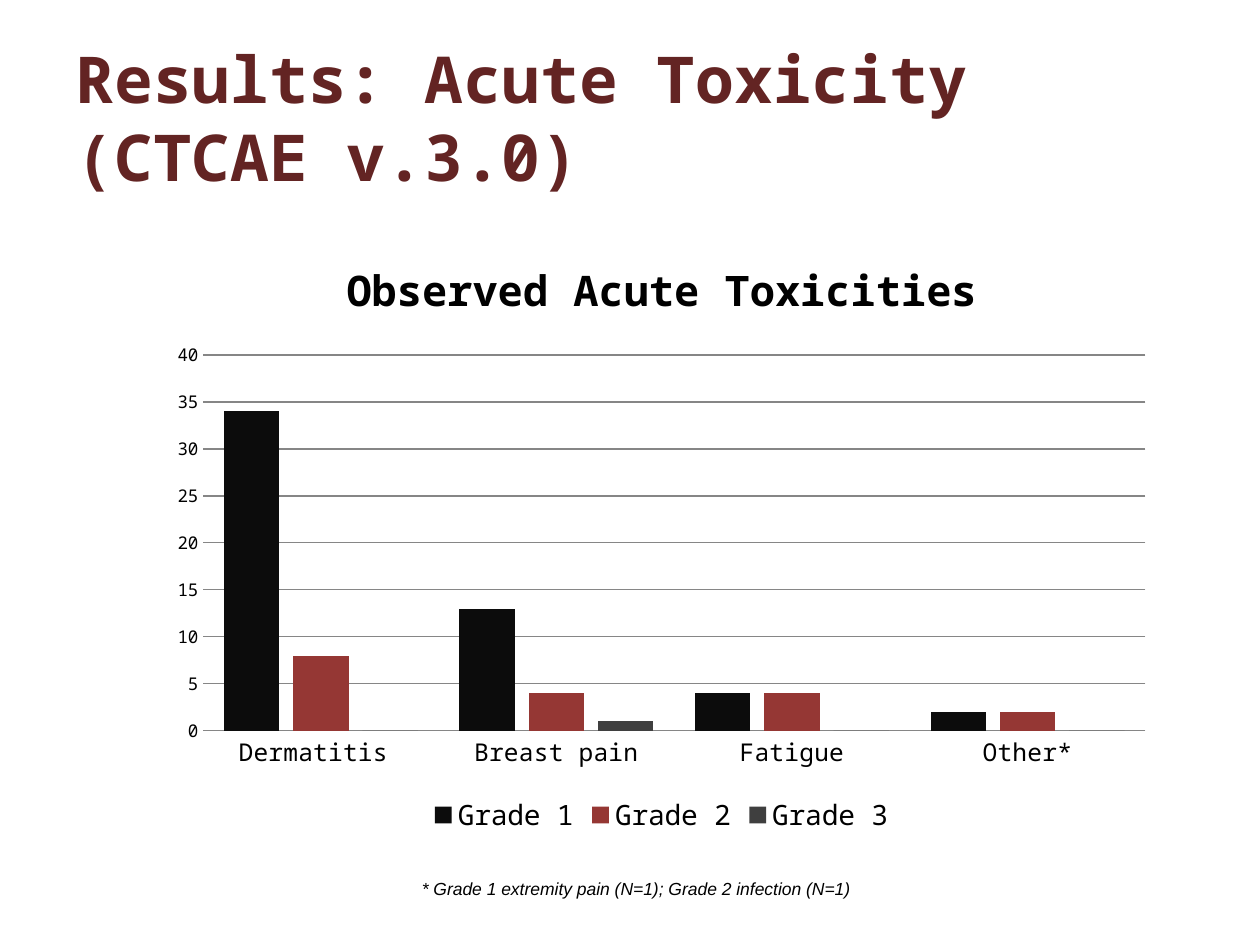
import pptx
import pptx.chart.data
import pptx.dml.color
import pptx.enum.chart
import pptx.enum.text
import pptx.util
from pptx.util import Inches

COLORS = {
    "title": "632423",
    "text": "000000",
    "grid": "868686",
    "Grade 1": "0C0C0C",
    "Grade 2": "953734",
    "Grade 3": "3F3F3F",
}
MONO = "Noto Sans Mono"
TOXICITIES = ["Dermatitis ", "Breast pain", "Fatigue", "Other*"]
GRADES = {
    "Grade 1": [34, 13, 4, 2],
    "Grade 2": [8, 4, 4, 2],
    "Grade 3": [0, 1, 0, 0],
}


def rgb(name):
    return pptx.dml.color.RGBColor.from_string(COLORS[name])


def style_font(font, size, color="text", **formats):
    font.size = pptx.util.Pt(size)
    font.color.rgb = rgb(color)
    for attribute, value in ({"name": MONO} | formats).items():
        setattr(font, attribute, value)


def write_text(frame, text, anchor, size, **formats):
    frame.word_wrap = True
    frame.vertical_anchor = anchor
    paragraph = frame.paragraphs[0]
    paragraph.alignment = pptx.enum.text.PP_ALIGN.LEFT
    run = paragraph.add_run()
    run.text = text
    style_font(run.font, size, **formats)


def add_title(slide, text):
    title = slide.shapes.title
    place = {"left": 0.5, "top": 0.3, "width": 9, "height": 1.25}
    for attribute, value in place.items():
        setattr(title, attribute, Inches(value))
    title.text_frame.auto_size = pptx.enum.text.MSO_AUTO_SIZE.NONE
    write_text(title.text_frame, text, pptx.enum.text.MSO_ANCHOR.MIDDLE,
               36.9, color="title", bold=True)


def add_toxicity_chart(slide):
    data = pptx.chart.data.CategoryChartData()
    data.categories = TOXICITIES
    for grade, counts in GRADES.items():
        data.add_series(grade, counts)
    chart = slide.shapes.add_chart(
        pptx.enum.chart.XL_CHART_TYPE.COLUMN_CLUSTERED,
        Inches(1.25), Inches(1.83), Inches(8), Inches(4.83), data).chart
    style_font(chart.font, 10)

    # Chart title
    heading = chart.chart_title.text_frame
    heading.text = "Observed Acute Toxicities"
    style_font(heading.paragraphs[0].runs[0].font, 24, bold=True)
    chart.chart_title.include_in_layout = False

    # Columns
    plot = chart.plots[0]
    plot.gap_width = 75
    plot.overlap = -25
    plot.vary_by_categories = False
    for series in plot.series:
        series.format.fill.solid()
        series.format.fill.fore_color.rgb = rgb(series.name)
        series.invert_if_negative = False

    # Axes
    no_tick = pptx.enum.chart.XL_TICK_MARK.NONE
    for axis, size in ((chart.category_axis, 14), (chart.value_axis, 10)):
        axis.major_tick_mark = no_tick
        axis.minor_tick_mark = no_tick
        style_font(axis.tick_labels.font, size)
    chart.category_axis.format.line.color.rgb = rgb("grid")
    counts_axis = chart.value_axis
    counts_axis.minimum_scale = 0
    counts_axis.maximum_scale = 40
    counts_axis.major_unit = 5
    counts_axis.format.line.fill.background()
    counts_axis.has_major_gridlines = True
    counts_axis.major_gridlines.format.line.color.rgb = rgb("grid")
    counts_axis.major_gridlines.format.line.width = pptx.util.Pt(0.75)

    # Legend
    chart.has_legend = True
    chart.legend.position = pptx.enum.chart.XL_LEGEND_POSITION.BOTTOM
    chart.legend.include_in_layout = False
    style_font(chart.legend.font, 16)


def add_footnote(slide, text):
    footnote = slide.shapes.add_textbox(
        Inches(3.25), Inches(6.92), Inches(4.67), Inches(0.27))
    footnote.text_frame.auto_size = pptx.enum.text.MSO_AUTO_SIZE.SHAPE_TO_FIT_TEXT
    write_text(footnote.text_frame, text, pptx.enum.text.MSO_ANCHOR.TOP,
               10, name="Arial", italic=True)


def main():
    presentation = pptx.Presentation()
    presentation.slide_width = Inches(10)
    presentation.slide_height = Inches(7.5)
    slide = presentation.slides.add_slide(presentation.slide_layouts[5])
    add_title(slide, "Results: Acute Toxicity (CTCAE v.3.0)")
    add_toxicity_chart(slide)
    add_footnote(slide, "* Grade 1 extremity pain (N=1); Grade 2 infection (N=1)")
    presentation.save("out.pptx")


if __name__ == "__main__":
    main()
